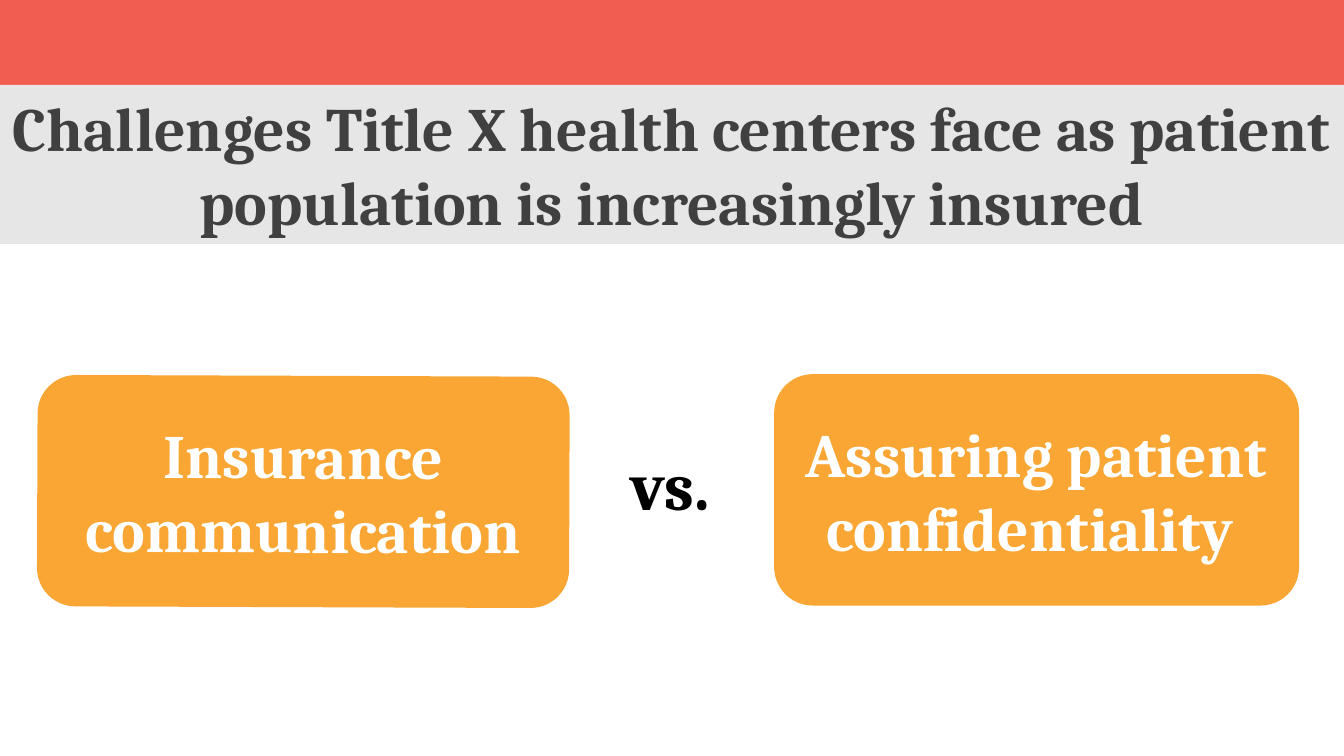
from dataclasses import dataclass

from pptx import Presentation
from pptx.dml.color import RGBColor
from pptx.enum.shapes import MSO_SHAPE
from pptx.enum.text import MSO_ANCHOR, PP_ALIGN
from pptx.util import Cm, Pt

RECT, ROUND = MSO_SHAPE.RECTANGLE, MSO_SHAPE.ROUNDED_RECTANGLE
TOP, MIDDLE = MSO_ANCHOR.TOP, MSO_ANCHOR.MIDDLE
LEFT, CENTER = PP_ALIGN.LEFT, PP_ALIGN.CENTER
WIDTH, HEIGHT = 33.87, 19.05


@dataclass(frozen=True)
class Theme:
    font: str = "Cambria"
    band: str = "F15D4F"
    panel: str = "E7E6E6"
    card: str = "FAA634"
    title: str = "404040"
    light: str = "FFFFFF"
    dark: str = "000000"
    large: int = 44
    versus: int = 48


THEME = Theme()


def block(slide, kind, box, fill):
    shape = slide.shapes.add_shape(kind, *map(Cm, box))
    shape.shadow.inherit = False
    shape.fill.solid()
    shape.fill.fore_color.rgb = RGBColor.from_string(fill)
    shape.line.fill.background()
    return shape


def write(shape, text, size, color, align=CENTER, anchor=MIDDLE, inset=(0, 0)):
    """Set one bold paragraph; inset is the side and the top margin in cm."""
    frame = shape.text_frame
    frame.word_wrap = True
    frame.vertical_anchor = anchor
    side, top = map(Cm, inset)
    frame.margin_left = frame.margin_right = side
    frame.margin_top = frame.margin_bottom = top
    line = frame.paragraphs[0]
    line.alignment = align
    run = line.add_run()
    run.text = text
    font = run.font
    font.name, font.size, font.bold = THEME.font, Pt(size), True
    font.color.rgb = RGBColor.from_string(color)


def header(slide, box, text):
    """Draw a coloured band with the title panel below it."""
    x, y, w, h = box
    split = 2.14
    block(slide, RECT, (x, y, w, split + 0.04), THEME.band)
    panel = block(slide, RECT, (x, y + split, w, h - split), THEME.panel)
    write(panel, text, THEME.large, THEME.title, anchor=TOP, inset=(0.25, 0.13))


def card(slide, box, text, turn=0):
    shape = block(slide, ROUND, box, THEME.card)
    shape.rotation = turn
    write(shape, text, THEME.large, THEME.light)


def contrast(slide, box, left, word, right):
    """Set two cards at the ends of the box, with a word between them."""
    x, y, w, h = box
    wide, slim = 13.41, 13.23
    card(slide, (x + w - slim, y, slim, h), right)
    card(slide, (x, y + 0.04, wide, h), left, 0.2)
    label = slide.shapes.add_textbox(
        Cm(x + wide + 1.3), Cm(y + 1.6), Cm(2.95), Cm(2.31))
    write(label, word, THEME.versus, THEME.dark, LEFT, TOP, (0.25, 0.13))


def main():
    deck = Presentation()
    deck.slide_width, deck.slide_height = Cm(WIDTH), Cm(HEIGHT)
    slide = deck.slides.add_slide(deck.slide_layouts[6])
    header(slide, (0, 0, WIDTH, 6.15),
           "Challenges Title X health centers face as patient "
           "population is increasingly insured")
    contrast(slide, (0.94, 9.43, 31.8, 5.83), "Insurance communication",
             "vs.", "Assuring patient confidentiality ")
    deck.save("out.pptx")


if __name__ == "__main__":
    main()
